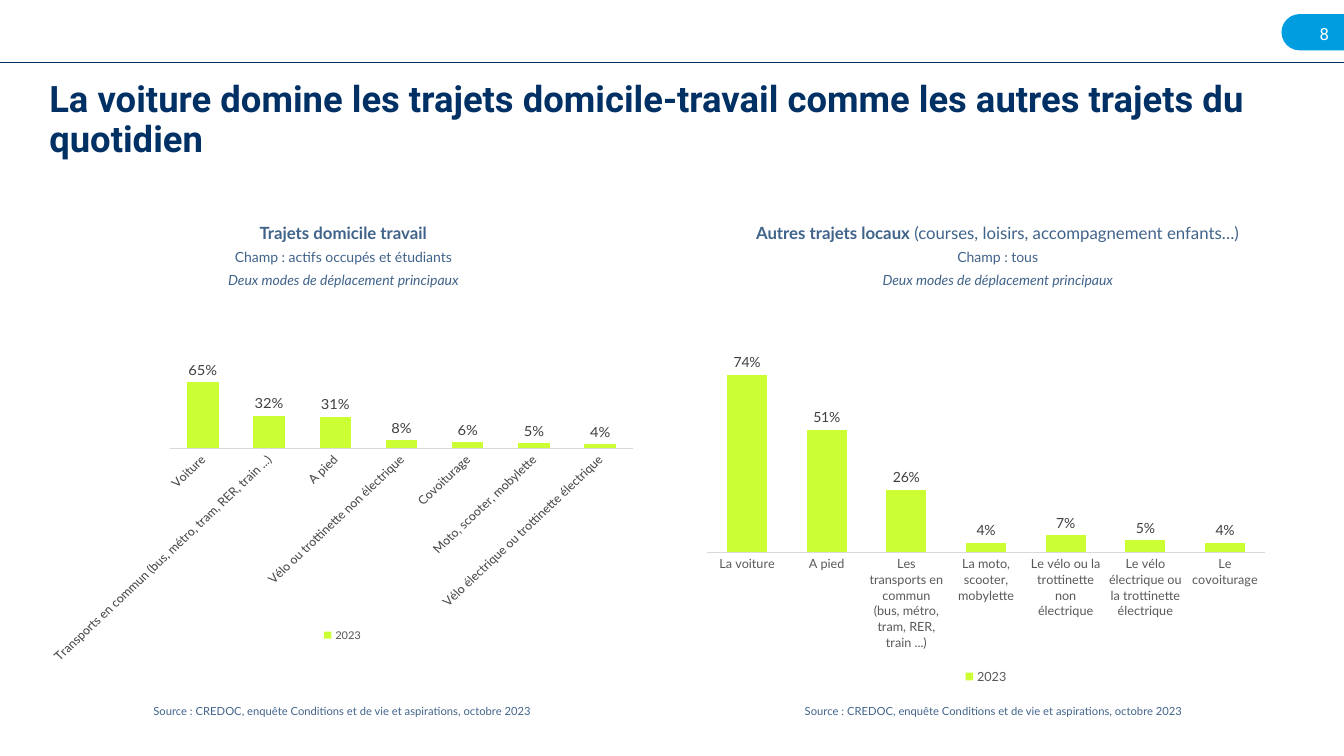
from lxml import etree
from pptx import Presentation, util as u
from pptx.chart.data import CategoryChartData
from pptx.dml.color import RGBColor
from pptx.enum import chart as ch, shapes, text
from pptx.oxml.ns import qn

WIDE, HIGH = u.Inches(13.33), u.Inches(7.5)
INK = {"navy": "003064", "blue": "009EE0", "lime": "CBFF33", "white": "FFFFFF",
       "grey": "595959", "dark": "404040", "rule": "D9D9D9"}
SOURCE = "Source : CREDOC, enquête Conditions et de vie et aspirations, octobre 2023"
MODES = "Deux modes de déplacement principaux"
MID, TOP = text.MSO_ANCHOR.MIDDLE, text.MSO_ANCHOR.TOP
AUTO = "-60000000"  # label angle left to the chart

WORK = [
    ("Voiture", 0.65),
    ("Transports en commun (bus, métro, tram, RER, train ...)", 0.32),
    ("A pied", 0.31),
    ("Vélo ou trottinette non électrique", 0.08),
    ("Covoiturage", 0.06),
    ("Moto, scooter, mobylette", 0.05),
    ("Vélo électrique ou trottinette électrique", 0.04),
]
LOCAL = [
    ("La voiture", 0.74),
    ("A pied", 0.51),
    ("Les transports en commun (bus, métro, tram, RER, train ...)", 0.26),
    ("La moto, scooter, mobylette", 0.04),
    ("Le vélo ou la trottinette non électrique", 0.07),
    ("Le vélo électrique ou la trottinette électrique", 0.05),
    ("Le covoiturage", 0.04),
]


def place(x, y, w, h):
    """Turn percentages of the slide into lengths."""
    return [int(side * part / 100)
            for side, part in zip((WIDE, HIGH, WIDE, HIGH), (x, y, w, h))]


def tint(color, name):
    color.rgb = RGBColor.from_string(INK[name])


def style(font, size, name, face="Lato"):
    font.size, font.name = u.Pt(size), face
    tint(font.color, name)


def write(slide, box, runs, size, ink="navy", face="Lato", align="CENTER",
          anchor=TOP, bold=None, italic=None, alpha=None):
    """Add one paragraph; runs is a string or a list of (words, bold)."""
    frame = slide.shapes.add_textbox(*place(*box)).text_frame
    frame.word_wrap, frame.vertical_anchor = True, anchor
    frame.margin_left = frame.margin_right = u.Inches(0.1)
    frame.margin_top = frame.margin_bottom = u.Inches(0.05)
    para = frame.paragraphs[0]
    para.alignment = getattr(text.PP_ALIGN, align)
    para.line_spacing = 0.9
    style(para.font, size, ink, face)
    para.font.bold, para.font.italic = bold, italic
    for words, heavy in [(runs, None)] if isinstance(runs, str) else runs:
        run = para.add_run()
        run.text, run.font.bold = words, heavy
        if alpha:
            tint(run.font.color, ink)
            for rgb in run.font.fill._xPr.iter(qn("a:srgbClr")):
                etree.SubElement(rgb, qn("a:alpha")).set("val", str(alpha * 1000))


def banner(slide):
    """Draw the page tab, its number and the rule below."""
    tab = slide.shapes.add_shape(shapes.MSO_SHAPE.ROUNDED_RECTANGLE,
                                 *place(95.35, 1.87, 15.15, 4.8))
    tab.adjustments[0] = 0.5
    tab.shadow.inherit = False
    tab.fill.solid()
    tint(tab.fill.fore_color, "blue")
    tab.line.fill.background()
    write(slide, (95.2, 2.4, 4.43, 4.4), "8", 12, "white", "Roboto", "RIGHT", MID)
    y = int(HIGH * 0.083)
    rule = slide.shapes.add_connector(shapes.MSO_CONNECTOR.STRAIGHT, 0, y, WIDE, y)
    rule.line.width = u.Pt(1)
    tint(rule.line.color, "navy")
    etree.SubElement(rule._element.spPr, qn("a:effectLst"))


def bars(slide, box, rows, gap, size, face):
    """Chart the shares; size is that of the labels, face that of the legend."""
    data = CategoryChartData(number_format="0%")
    data.categories = [name for name, _ in rows]
    data.add_series("2023", [share for _, share in rows])
    chart = slide.shapes.add_chart(ch.XL_CHART_TYPE.COLUMN_CLUSTERED,
                                   *place(*box), data).chart
    chart.has_title = False
    chart.font.size, chart.font.name = u.Pt(10), "Calibri"
    chart.has_legend = True
    chart.legend.position = ch.XL_LEGEND_POSITION.BOTTOM
    chart.legend.include_in_layout = False
    style(chart.legend.font, 9, "grey", face)

    scale = chart.value_axis
    scale.visible = scale.has_major_gridlines = False
    scale.minimum_scale, scale.maximum_scale = 0, 0.8
    axis = chart.category_axis
    axis.major_tick_mark = axis.minor_tick_mark = ch.XL_TICK_MARK.NONE
    axis.format.line.width = u.Pt(0.75)
    tint(axis.format.line.color, "rule")
    style(axis.tick_labels.font, 9, "grey")
    for body in axis._element.iter(qn("a:bodyPr")):
        body.set("rot", AUTO)

    plot = chart.plots[0]
    plot.gap_width, plot.overlap, plot.vary_by_categories = gap, -27, False
    fill = plot.series[0].format.fill
    fill.solid()
    tint(fill.fore_color, "lime")
    plot.has_data_labels = True
    tags = plot.data_labels
    tags.show_value = True
    tags.number_format, tags.number_format_is_linked = "0%", False
    tags.position = ch.XL_LABEL_POSITION.OUTSIDE_END
    style(tags.font, size, "dark")


def panel(slide, left, foot, title, field):
    """Write the three heading lines and the source of one half."""
    lines = [(title, 12, 29.07, None), (field, 10, 32.4, None), (MODES, 10, 35.47, True)]
    for words, size, y, italic in lines:
        write(slide, (left, y, 42.99, 3.07), words, size, italic=italic, alpha=75)
    write(slide, (foot, 92.67, 42.09, 2.13), SOURCE, 8, alpha=75)


def main():
    deck = Presentation()
    deck.slide_width, deck.slide_height = WIDE, HIGH
    slide = deck.slides.add_slide(deck.slide_layouts[6])
    banner(slide)
    write(slide, (2.93, 10.13, 93.47, 11.2),
          "La voiture domine les trajets domicile-travail comme les autres "
          "trajets du quotidien", 26, face="Roboto", align="LEFT", bold=True)
    panel(slide, 4.05, 4.43, [("Trajets domicile travail", True)],
          "Champ : actifs occupés et étudiants")
    bars(slide, (2.93, 47.73, 45.09, 40), WORK, 110, 10.5, "Calibri")
    panel(slide, 52.74, 52.89,
          [("Autres trajets locaux ", True),
           ("(courses, loisirs, accompagnement enfants…)", False)], "Champ : tous")
    bars(slide, (51.76, 46.8, 43.21, 44.27), LOCAL, 100, 10, "Lato")
    deck.save("out.pptx")


if __name__ == "__main__":
    main()
